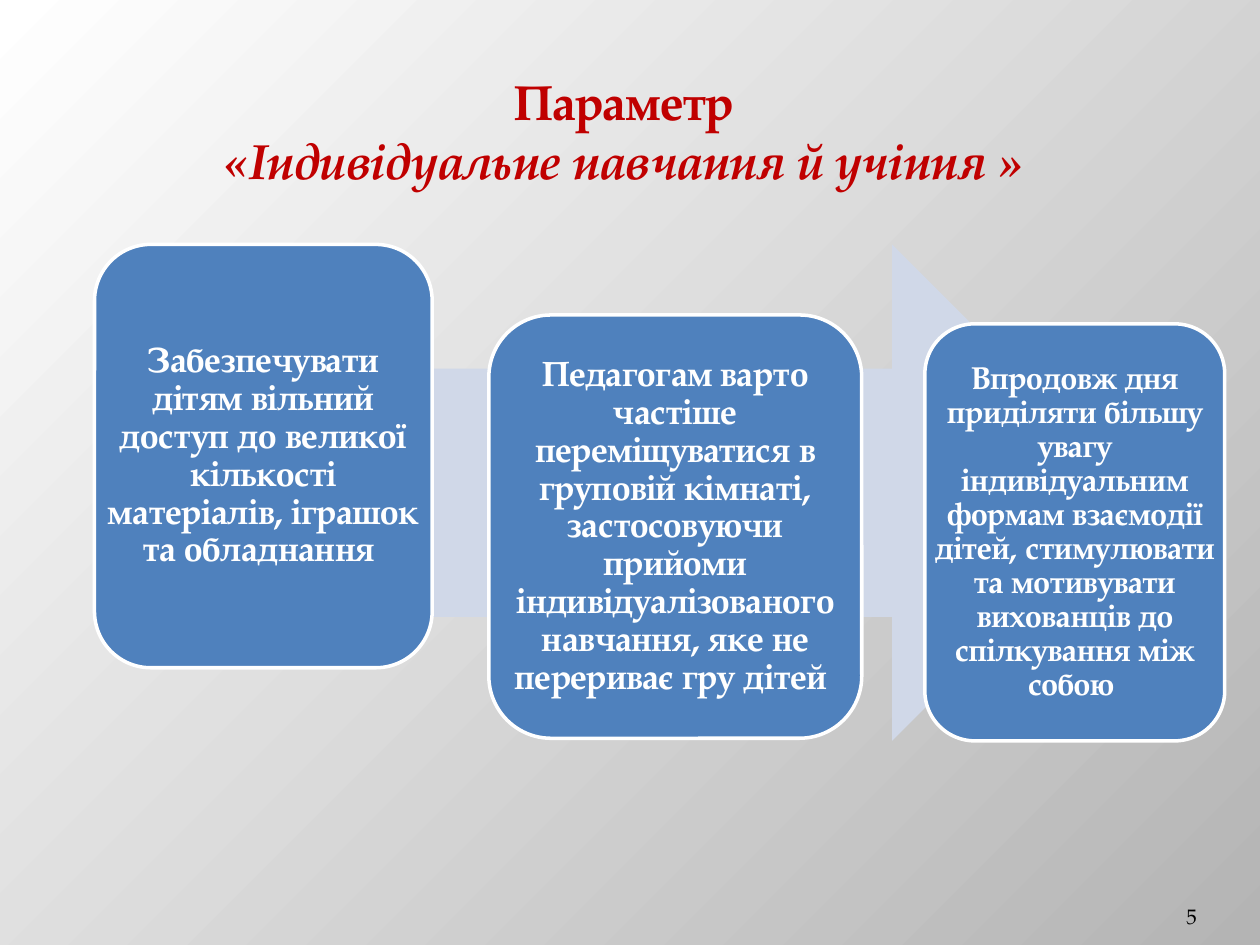
from pptx import Presentation
from pptx.dml.color import RGBColor
from pptx.enum.shapes import MSO_SHAPE
from pptx.enum.text import MSO_ANCHOR, PP_ALIGN
from pptx.util import Inches, Pt

FONT = "TeX Gyre Pagella"
COLORS = {
    "light": "FFFFFF",
    "shade": "B4B4B4",
    "title": "C00000",
    "arrow": "D0D8E8",
    "card": "4F81BD",
    "number": "000000",
}


def add_block(kind, left, top, width, height, fill, outline=None):
    block = slide.shapes.add_shape(
        kind, Inches(left), Inches(top), Inches(width), Inches(height))
    block.shadow.inherit = False
    block.fill.solid()
    block.fill.fore_color.rgb = RGBColor.from_string(COLORS[fill])
    if outline:
        block.line.color.rgb = RGBColor.from_string(COLORS[outline])
        block.line.width = Pt(2)
    else:
        block.line.fill.background()


def add_text(lines, left, top, width, height, size, color, align=PP_ALIGN.CENTER,
             anchor=MSO_ANCHOR.TOP, insets=(0.1, 0.05), bold=True, spacing=None):
    """Add a wrapped text box and return its paragraphs; insets are (side, top)."""
    frame = slide.shapes.add_textbox(
        Inches(left), Inches(top), Inches(width), Inches(height)).text_frame
    frame.word_wrap = True
    frame.vertical_anchor = anchor
    frame.margin_left = frame.margin_right = Inches(insets[0])
    frame.margin_top = frame.margin_bottom = Inches(insets[1])
    frame.text = "\n".join(lines)
    for paragraph in frame.paragraphs:
        paragraph.alignment = align
        paragraph.line_spacing = spacing
        paragraph.font.name = FONT
        paragraph.font.size = Pt(size)
        paragraph.font.bold = bold
        paragraph.font.color.rgb = RGBColor.from_string(COLORS[color])
    return frame.paragraphs


prs = Presentation()
prs.slide_width = Inches(10)
prs.slide_height = Inches(7.5)
slide = prs.slides.add_slide(prs.slide_layouts[6])

# Background: light top left, grey bottom right
backdrop = slide.background.fill
backdrop.gradient()
backdrop.gradient_angle = 315
for stop, shade in zip(backdrop.gradient_stops, ("light", "shade")):
    stop.color.rgb = RGBColor.from_string(COLORS[shade])

# Slide number and title
add_text(["5"], 8.67, 7.02, 0.83, 0.4, 12, "number", align=PP_ALIGN.RIGHT,
         anchor=MSO_ANCHOR.BOTTOM, insets=(0, 0.05), bold=False)
heading, parameter = add_text(
    ["Параметр ", "«Індивідуальне навчання й учіння » "],
    0.75, 0.52, 8.5, 1.04, 28, "title")
parameter.font.italic = True

# Recommendations along the arrow
add_block(MSO_SHAPE.RIGHT_ARROW, 1.42, 1.94, 7.63, 3.94, "arrow")

recommendations = [
    ((0.75, 1.94, 2.68, 3.36), 20, 0.08,
     "Забезпечувати дітям вільний доступ до великої кількості матеріалів, "
     "іграшок та обладнання "),
    ((3.88, 2.5, 2.96, 3.36), 20, 0.08,
     "Педагогам варто частіше переміщуватися в груповій кімнаті, застосовуючи "
     "прийоми індивідуалізованого навчання, яке не перериває гру дітей "),
    ((7.34, 2.57, 2.38, 3.31), 18, 0.07,
     "Впродовж дня приділяти більшу увагу індивідуальним формам взаємодії дітей, "
     "стимулювати та мотивувати вихованців до спілкування між собою "),
]
for place, size, inset, advice in recommendations:
    add_block(MSO_SHAPE.ROUNDED_RECTANGLE, *place, "card", "light")
    add_text([advice], *place, size, "light", anchor=MSO_ANCHOR.MIDDLE,
             insets=(inset, inset), spacing=0.9)

prs.save("out.pptx")
